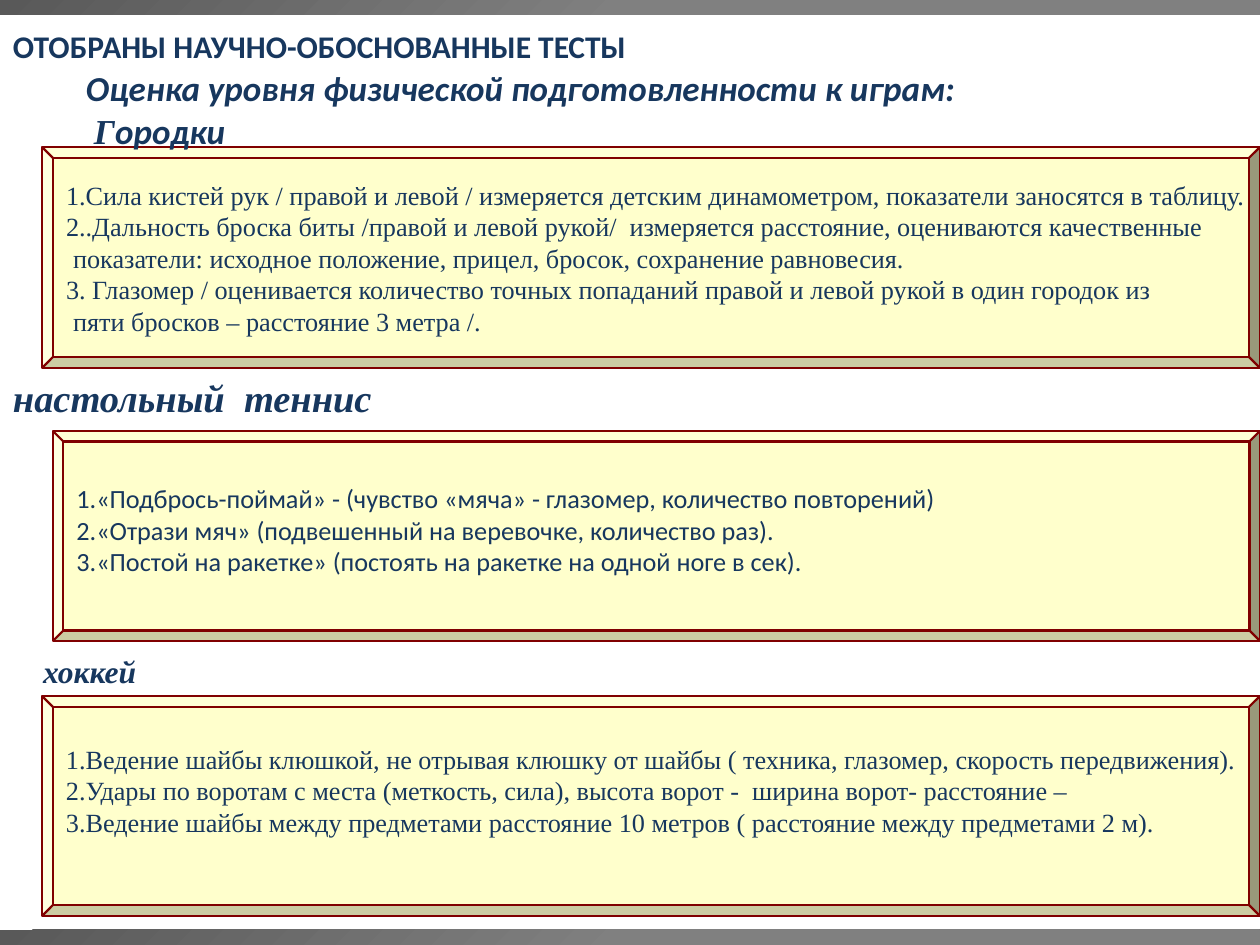
from dataclasses import dataclass

from pptx import Presentation
from pptx.dml.color import RGBColor
from pptx.enum import shapes, text
from pptx.util import Pt

EMU_PER_PX = 914400 / 126
WIDTH, HEIGHT, BAR_HEIGHT = 1260, 945, 15

NAVY = RGBColor(0x17, 0x37, 0x5E)
CREAM = RGBColor(0xFF, 0xFF, 0xCC)
MAROON = RGBColor(0x80, 0x00, 0x00)
DARK_GREY = RGBColor(0x59, 0x59, 0x59)
GREY = RGBColor(0x80, 0x80, 0x80)

SANS, SERIF = "Calibri", "Times New Roman"
INSET_X, INSET_Y = 13, 6


@dataclass(frozen=True)
class Line:
    """One paragraph; a different font may be named for its first letter."""
    text: str
    indent: int = 0
    initial_font: str | None = None


@dataclass(frozen=True)
class Heading:
    box: tuple[int, int, int, int]
    lines: list[Line]
    size: int
    font: str
    italic: bool = True


@dataclass(frozen=True)
class Panel:
    box: tuple[int, int, int, int]
    lines: list[Line]
    font: str
    top_inset: int


HEADINGS = [
    Heading((0, 21, 1218, 50), [Line("ОТОБРАНЫ НАУЧНО-ОБОСНОВАННЫЕ ТЕСТЫ")],
            18, SANS, italic=False),
    Heading((73, 61, 1187, 136),
            [Line("Оценка уровня физической подготовленности к играм:"),
             Line("Городки", indent=8, initial_font=SERIF)], 20, SANS),
    Heading((0, 368, 1260, 101), [Line("настольный  теннис")], 22, SERIF),
    Heading((30, 646, 120, 89), [Line("хоккей")], 18, SERIF),
]

PANELS = [
    Panel((42, 147, 1218, 221), [
        Line("1.Сила кистей рук / правой и левой / измеряется детским динамометром, "
             "показатели заносятся в таблицу."),
        Line("2..Дальность броска биты /правой и левой рукой/  измеряется расстояние, "
             "оцениваются качественные"),
        Line("показатели: исходное положение, прицел, бросок, сохранение равновесия.",
             indent=7),
        Line("3. Глазомер / оценивается количество точных попаданий правой и левой "
             "рукой в один городок из"),
        Line("пяти бросков – расстояние 3 метра /.", indent=7),
    ], SERIF, top_inset=21),
    Panel((53, 431, 1207, 210), [
        Line("1.«Подбрось-поймай» - (чувство «мяча» - глазомер, количество повторений)"),
        Line("2.«Отрази мяч» (подвешенный на веревочке, количество раз)."),
        Line("3.«Постой на ракетке» (постоять на ракетке на одной ноге в сек)."),
    ], SANS, top_inset=41),
    Panel((42, 696, 1218, 220), [
        Line("1.Ведение шайбы клюшкой, не отрывая клюшку от шайбы ( техника, глазомер, "
             "скорость передвижения)."),
        Line("2.Удары по воротам с места (меткость, сила), высота ворот -  ширина "
             "ворот- расстояние –"),
        Line("3.Ведение шайбы между предметами расстояние 10 метров ( расстояние между "
             "предметами 2 м)."),
    ], SERIF, top_inset=36),
]


def px(n: int) -> int:
    return round(n * EMU_PER_PX)


def write_text(sp, lines: list[Line], *, font: str, size: int, bold: bool = False,
               italic: bool = False, top_inset: int = INSET_Y,
               spacing: Pt | None = None) -> None:
    tf = sp.text_frame
    tf.word_wrap = True
    tf.vertical_anchor = text.MSO_ANCHOR.TOP
    tf.margin_left, tf.margin_right = px(INSET_X), 0
    tf.margin_top, tf.margin_bottom = px(top_inset), 0
    for i, line in enumerate(lines):
        p = tf.paragraphs[0] if i == 0 else tf.add_paragraph()
        p.alignment = text.PP_ALIGN.LEFT
        if spacing:
            p.line_spacing = spacing
        if line.indent:
            p._p.get_or_add_pPr().set("marL", str(px(line.indent)))
        pieces = [(line.text, font)]
        if line.initial_font:
            pieces = [(line.text[0], line.initial_font), (line.text[1:], font)]
        for piece, name in pieces:
            r = p.add_run()
            r.text = piece
            r.font.name, r.font.size = name, Pt(size)
            r.font.bold, r.font.italic = bold, italic
            r.font.color.rgb = NAVY


def add_shape(s, kind: shapes.MSO_SHAPE, box: tuple[int, int, int, int]):
    sp = s.shapes.add_shape(kind, *map(px, box))
    sp.shadow.inherit = False
    return sp


def add_bar(s, top: int) -> None:
    sp = add_shape(s, shapes.MSO_SHAPE.RECTANGLE, (0, top, WIDTH, BAR_HEIGHT))
    sp.line.fill.background()
    sp.fill.gradient()
    sp.fill.gradient_angle = 315
    for stop, colour, position in zip(sp.fill.gradient_stops, (DARK_GREY, GREY), (0, 0.5)):
        stop.color.rgb = colour
        stop.position = position


def add_panel(s, panel: Panel) -> None:
    sp = add_shape(s, shapes.MSO_SHAPE.BEVEL, panel.box)
    sp.adjustments[0] = 0.05
    sp.fill.solid()
    sp.fill.fore_color.rgb = CREAM
    sp.line.color.rgb = MAROON
    sp.line.width = Pt(1.25)
    write_text(sp, panel.lines, font=panel.font, size=15,
               top_inset=panel.top_inset, spacing=Pt(18))


def add_heading(s, heading: Heading) -> None:
    sp = s.shapes.add_textbox(*map(px, heading.box))
    write_text(sp, heading.lines, font=heading.font, size=heading.size,
               bold=True, italic=heading.italic)


def main() -> None:
    prs = Presentation()
    prs.slide_width, prs.slide_height = px(WIDTH), px(HEIGHT)
    s = prs.slides.add_slide(prs.slide_layouts[6])
    for top in (0, HEIGHT - BAR_HEIGHT):
        add_bar(s, top)
    for panel in PANELS:
        add_panel(s, panel)
    for heading in HEADINGS:
        add_heading(s, heading)
    prs.save("out.pptx")


if __name__ == "__main__":
    main()
